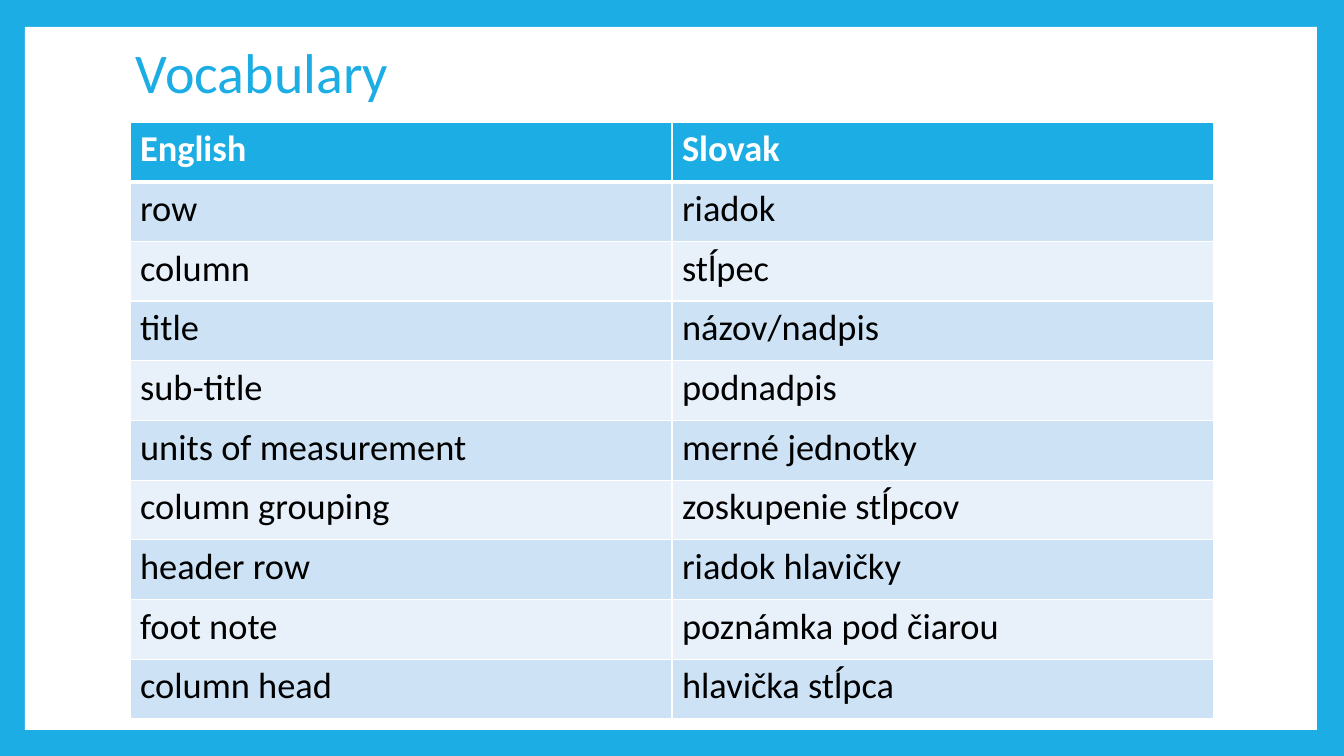
from lxml import etree
from pptx import Presentation
from pptx.dml.color import RGBColor
from pptx.enum.shapes import MSO_SHAPE
from pptx.enum.text import MSO_ANCHOR
from pptx.oxml.ns import qn
from pptx.util import Emu, Pt

TITLE = "Vocabulary"
VOCABULARY = [
    ("English", "Slovak"),
    ("row", "riadok"),
    ("column", "stĺpec"),
    ("title", "názov/nadpis"),
    ("sub-title", "podnadpis"),
    ("units of measurement", "merné jednotky"),
    ("column grouping", "zoskupenie stĺpcov"),
    ("header row", "riadok hlavičky"),
    ("foot note", "poznámka pod čiarou"),
    ("column head", "hlavička stĺpca"),
]

FONT = "Calibri"
BLUE = RGBColor(0x1C, 0xAD, 0xE4)
WHITE = RGBColor(0xFF, 0xFF, 0xFF)
BLACK = RGBColor(0x00, 0x00, 0x00)
BANDS = [RGBColor(0xE8, 0xF1, 0xFA), RGBColor(0xCD, 0xE3, 0xF5)]

SLIDE = (1344, 756)
PANEL = (25, 27, 1292, 703)
TITLE_BOX = (126, 28, 1089, 94)
TABLE_BOX = (130, 122, 1084, 597)


def px(*lengths):
    return [Emu(round(n * 914400 / 100.8)) for n in lengths]


def style(p, size, color, bold=False):
    font = p.runs[0].font
    font.name, font.size, font.bold = FONT, Pt(size), bold
    font.color.rgb = color


def set_borders(cell, color, **widths):
    """Draw cell borders; widths are points keyed by side, in the order L, R, T, B."""
    tcPr = cell._tc.get_or_add_tcPr()
    for i, (side, width) in enumerate(widths.items()):
        ln = etree.Element(qn(f"a:ln{side}"), w=str(Pt(width)))
        fill = etree.SubElement(ln, qn("a:solidFill"))
        etree.SubElement(fill, qn("a:srgbClr"), val=str(color))
        tcPr.insert(i, ln)


def add_panel(s):
    sp = s.shapes.add_shape(MSO_SHAPE.RECTANGLE, *px(*PANEL))
    sp.shadow.inherit = False
    sp.fill.solid()
    sp.fill.fore_color.rgb = WHITE
    sp.line.fill.background()


def add_title(s):
    tf = s.shapes.add_textbox(*px(*TITLE_BOX)).text_frame
    tf.word_wrap = True
    tf.vertical_anchor = MSO_ANCHOR.MIDDLE
    tf.text = TITLE
    p = tf.paragraphs[0]
    p.line_spacing = 0.9
    style(p, 40, BLUE)


def add_vocabulary(s):
    rows, cols = len(VOCABULARY), len(VOCABULARY[0])
    table = s.shapes.add_table(rows, cols, *px(*TABLE_BOX)).table
    for i, words in enumerate(VOCABULARY):
        header = i == 0
        for j, word in enumerate(words):
            cell = table.cell(i, j)
            cell.text = word
            style(cell.text_frame.paragraphs[0], 26, WHITE if header else BLACK, header)
            cell.fill.solid()
            cell.fill.fore_color.rgb = BLUE if header else BANDS[i % 2]
            set_borders(cell, WHITE, L=1, R=1, T=3 if i == 1 else 1, B=3 if header else 1)


def main():
    prs = Presentation()
    prs.slide_width, prs.slide_height = px(*SLIDE)
    s = prs.slides.add_slide(prs.slide_layouts[6])
    s.background.fill.solid()
    s.background.fill.fore_color.rgb = BLUE
    add_panel(s)
    add_title(s)
    add_vocabulary(s)
    prs.save("out.pptx")


if __name__ == "__main__":
    main()
